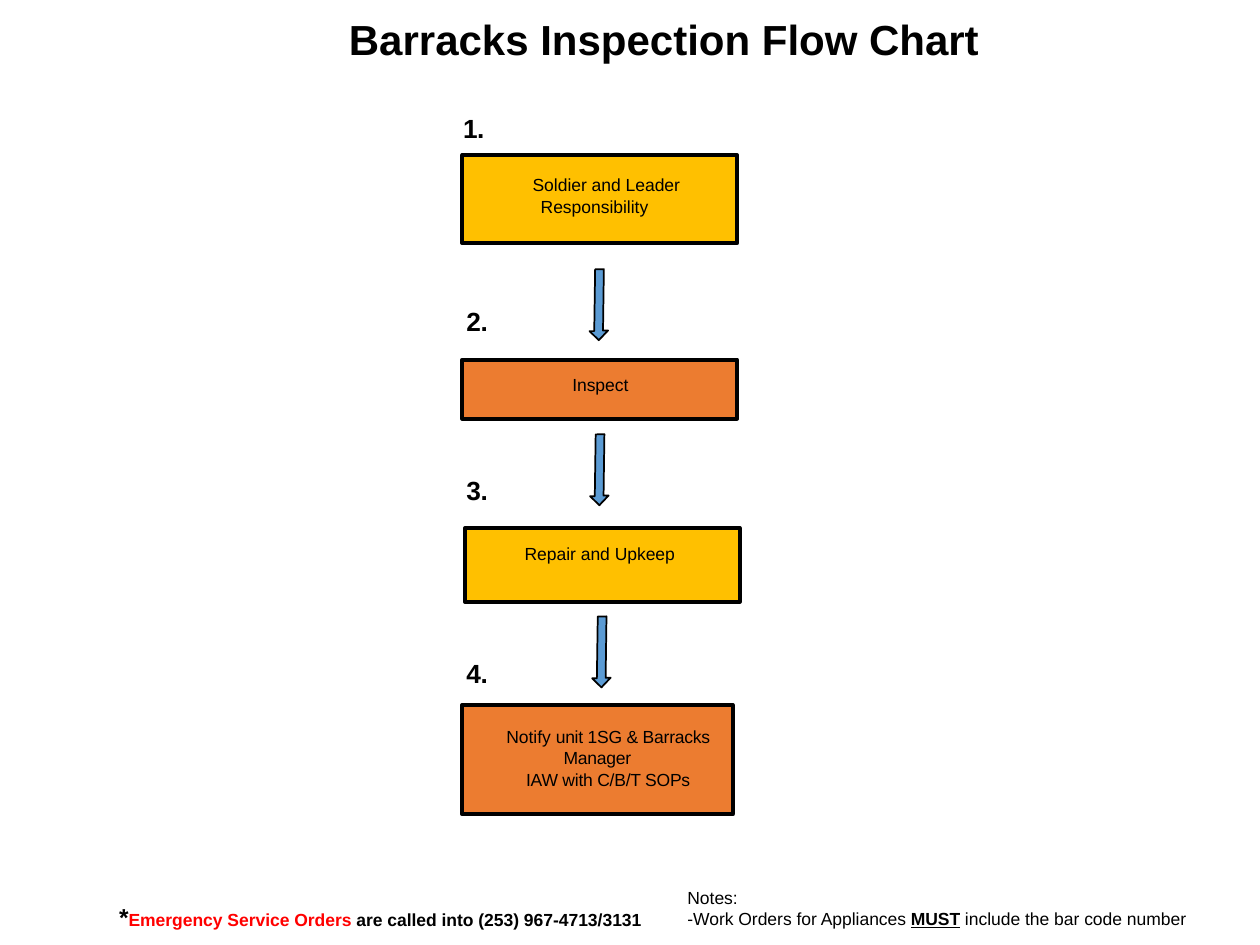
from dataclasses import dataclass
from math import cos, radians, sin

from lxml import etree
from pptx import Presentation
from pptx import util as u
from pptx.dml.color import RGBColor
from pptx.enum import shapes, text
from pptx.oxml.ns import qn

BLACK = RGBColor(0, 0, 0)
RED = RGBColor(0xFF, 0, 0)
GOLD = RGBColor(0xFF, 0xC0, 0)
RUST = RGBColor(0xEC, 0x7C, 0x30)
BLUE = RGBColor(0x5B, 0x9B, 0xD4)
FONT = "Arial"
MID = text.PP_ALIGN.CENTER
LEFT = text.PP_ALIGN.LEFT

# Arrow outline in points, measured from its tip, and the turn of its frame
ARROW = [(-5.3, -5.2), (-2.6, -5.2), (-2.1, -40.5), (2.9, -40.6),
         (2.4, -5.5), (5.3, -5.6), (0, 0)]
TURN = 304.2


@dataclass
class Part:
    """A run of text with its own format; gap is letter spacing in points."""
    words: str
    font: dict
    gap: float = 0


@dataclass
class Step:
    """A numbered box; lengths in points."""
    paras: list
    fill: RGBColor
    at: tuple
    top: float          # inset above the text
    pad: tuple          # left margin, right margin, first line indent
    num: tuple          # place of the number
    lead: float = 1.0


STEPS = [
    Step([[Part("Soldier and Leader Responsibility", {})]], GOLD,
         (264.2, 88.6, 157, 50.4), 11.1, (21, 27, 13.5), (264.6, 63.4)),
    Step([[Part("Inspect", {})]], RUST,
         (264.2, 205.5, 157, 33.8), 7.9, (7, 6.3, 0), (266.6, 173.5), 1.03),
    Step([[Part("Repair and Upkeep", {})]], GOLD,
         (265.7, 301.7, 157, 42.2), 8.6, (21, 24, 0), (266.6, 270)),
    Step([[Part("Notify ", {}), Part("unit 1SG & Barracks Manager", {}, -0.1)],
          [Part("IAW with C/B/T SOPs", {}, -0.1)]], RUST,
         (264.2, 402.8, 154.5, 62.6), 12, (8, 8, 12.2), (266.6, 374.7), 1.01),
]
TIPS = [(342.2, 194.4), (342.5, 288.7), (343.7, 392.8)]


def apply(obj, vals: dict) -> None:
    for key, val in vals.items():
        setattr(obj, key, val)


def place(shape, at: tuple) -> None:
    names = ("left", "top", "width", "height")
    apply(shape, {k: u.Pt(v) for k, v in zip(names, at)})


def frame(shape, pad: tuple, wrap: bool = True):
    """Set insets (left, top, right, bottom) and anchor the text at the top."""
    tf = shape.text_frame
    sides = ("margin_left", "margin_top", "margin_right", "margin_bottom")
    apply(tf, {k: u.Pt(v) for k, v in zip(sides, pad)})
    apply(tf, {"word_wrap": wrap, "auto_size": text.MSO_AUTO_SIZE.NONE,
               "vertical_anchor": text.MSO_ANCHOR.TOP})
    return tf


def write(tf, paras: list, size: float, align=LEFT, lead: float = 1.0,
          pad: tuple = (0, 0, 0)) -> None:
    """Fill the frame with paragraphs, each a list of parts."""
    for i, parts in enumerate(paras):
        para = tf.paragraphs[0] if i == 0 else tf.add_paragraph()
        apply(para, {"alignment": align, "line_spacing": lead,
                     "space_before": u.Pt(0), "space_after": u.Pt(0)})
        props = para._p.get_or_add_pPr()
        for key, val in zip(("marL", "marR", "indent"), pad):
            props.set(key, str(int(u.Pt(val))))
        etree.SubElement(props, qn("a:buNone"))
        for part in parts:
            run = para.add_run()
            run.text = part.words
            run.font.color.rgb = part.font.get("rgb", BLACK)
            apply(run.font, {"name": FONT, "size": u.Pt(size)})
            apply(run.font, {k: v for k, v in part.font.items() if k != "rgb"})
            if part.gap:
                run._r.get_or_add_rPr().set("spc", str(round(part.gap * 100)))


def paint(shape, fill: RGBColor | None, width: float) -> None:
    """Fill and outline a shape; no fill or a zero width leaves that out."""
    shape.shadow.inherit = False
    if fill is None:
        shape.fill.background()
    else:
        shape.fill.solid()
        shape.fill.fore_color.rgb = fill
    if width:
        shape.line.color.rgb = BLACK
        shape.line.width = u.Pt(width)
    else:
        shape.line.fill.background()


def label(slide, at: tuple):
    box = slide.shapes.add_textbox(0, 0, 0, 0)
    place(box, at)
    return box


def draw_step(slide, num: int, step: Step) -> None:
    box = slide.shapes.add_shape(shapes.MSO_SHAPE.RECTANGLE, 0, 0, 0, 0)
    place(box, step.at)
    paint(box, step.fill, 2.25)
    write(frame(box, (0, step.top, 0, 0)), step.paras, 10, MID,
          step.lead, step.pad)
    tag = label(slide, (*step.num, 20, 19.4))
    write(frame(tag, (0, 0.9, 0, 0)),
          [[Part(f"{num}.", {"bold": True}, -0.2)]], 15)


def spin(x: float, y: float, deg: float) -> tuple:
    a = radians(deg)
    return x * cos(a) - y * sin(a), x * sin(a) + y * cos(a)


def draw_arrow(slide, tip: tuple) -> None:
    """Group a filled shape and its outline, both in a turned frame."""
    flat = [spin(x, y, -TURN) for x, y in ARROW]
    mid = [(min(axis) + max(axis)) / 2 for axis in zip(*flat)]
    shift = [t + s - m for t, s, m in zip(tip, spin(*mid, TURN), mid)]
    pts = [(u.Pt(x + shift[0]), u.Pt(y + shift[1])) for x, y in flat]
    group = slide.shapes.add_group_shape()
    for fill, width in ((BLUE, 0), (None, 1)):
        pen = group.shapes.build_freeform(*pts[0])
        pen.add_line_segments(pts[1:], close=True)
        shape = pen.convert_to_shape()
        shape.rotation = TURN
        paint(shape, fill, width)


def main() -> None:
    deck = Presentation()
    apply(deck, {"slide_width": u.Pt(720), "slide_height": u.Pt(540)})
    slide = deck.slides.add_slide(deck.slide_layouts[1])
    bold = {"bold": True}

    # Title
    title = slide.shapes.title
    place(title, (58.3, 7.2, 635, 33.1))
    write(frame(title, (14.4, 3.6, 7.2, 3.6)),
          [[Part("Barracks Inspection Flow Chart", bold)]], 24, MID, 0.9)

    # Flow
    for num, step in enumerate(STEPS, 1):
        draw_step(slide, num, step)
    for tip in TIPS:
        draw_arrow(slide, tip)

    # Emergency line
    foot = label(slide, (-62.8, 510.8, 560, 23.8))
    write(frame(foot, (7.2, 3.6, 7.2, 3.6)), [[
        Part("*", bold | {"size": u.Pt(14)}),
        Part("Emergency Service Orders ", bold | {"rgb": RED}),
        Part("are called into (253) 967-4713/3131", bold),
    ]], 10, MID, 1.07)

    # Notes
    notes = slide.placeholders[1]
    place(notes, (385.6, 503.3, 303, 31.7))
    write(frame(notes, (7.2, 3.6, 7.2, 3.6), False), [
        [Part("Notes:", {})],
        [Part("-Work Orders for Appliances ", {}),
         Part("MUST", bold | {"underline": True}),
         Part(" include the bar code number", {})],
    ], 10)

    deck.save("out.pptx")


if __name__ == "__main__":
    main()
